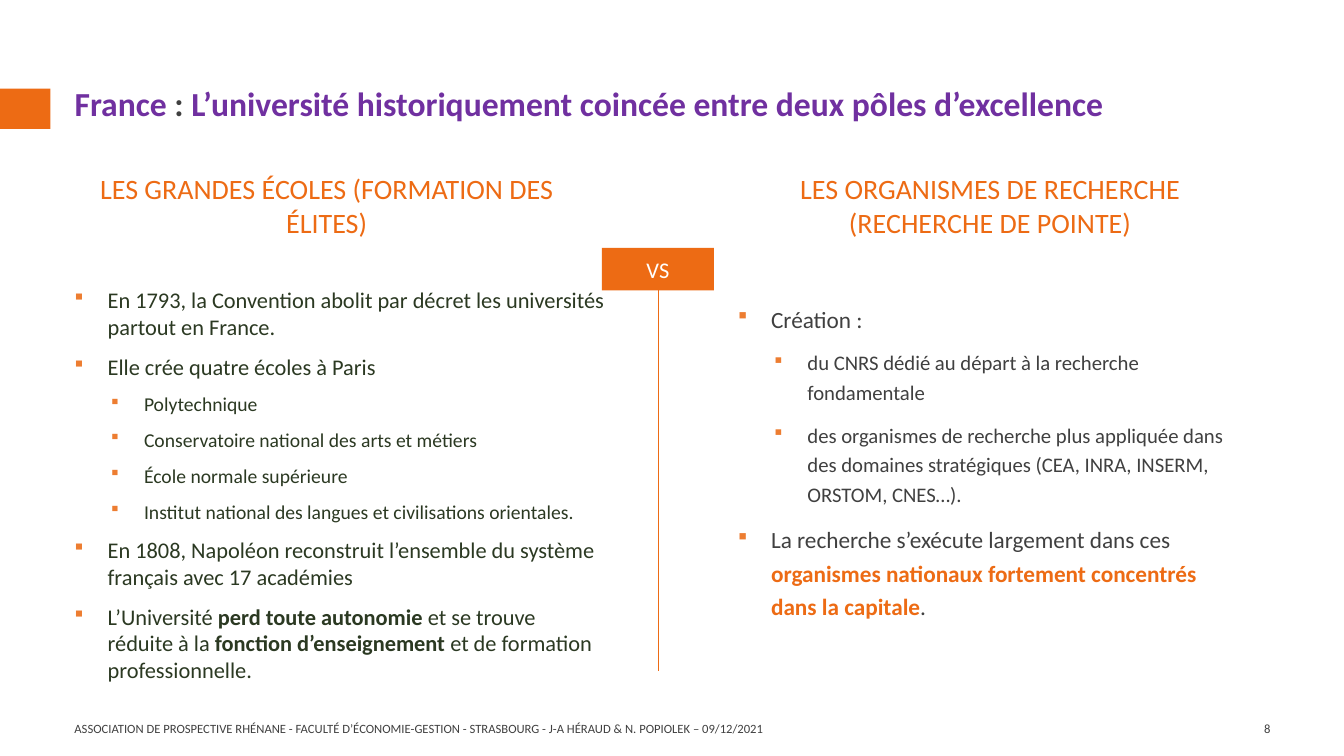
import pptx
import pptx.util
import pptx.dml.color
import pptx.enum.shapes
import pptx.enum.text
import pptx.oxml.ns
from lxml import etree

Inches, Pt = pptx.util.Inches, pptx.util.Pt
ALIGN = pptx.enum.text.PP_ALIGN
ANCHOR = pptx.enum.text.MSO_ANCHOR
qn = pptx.oxml.ns.qn

# Content: a run is (text, colour, bold); a bullet is (level, runs)
COLORS = {"orange": "ED6B14", "bullet": "ED7D31", "purple": "7030A0", "grey": "404040",
          "dark": "2B3922", "white": "FFFFFF"}
FONT = "Calibri"
TITLE = [("France ", "purple", True), (": ", "grey", True),
         ("L’université historiquement coincée entre deux pôles d’excellence", "purple", True)]
SCHOOLS = [
    (0, [("En 1793, la Convention abolit par décret les universités partout en France.", "dark", False)]),
    (0, [("Elle crée quatre écoles à Paris", "dark", False)]),
    (1, [("Polytechnique", "dark", False)]),
    (1, [("Conservatoire national des arts et métiers", "dark", False)]),
    (1, [("École normale supérieure", "dark", False)]),
    (1, [("Institut national des langues et civilisations orientales.", "dark", False)]),
    (0, [("En 1808, Napoléon reconstruit l’ensemble du système français avec 17 académies", "dark", False)]),
    (0, [("L’Université ", "dark", False), ("perd toute autonomie ", "dark", True),
         ("et se trouve réduite à la ", "dark", False), ("fonction d’enseignement ", "dark", True),
         ("et de formation professionnelle.", "dark", False)]),
]
RESEARCH = [
    (0, [("Création :", "grey", False)]),
    (1, [("du CNRS dédié au départ à la recherche fondamentale", "grey", False)]),
    (1, [("des organismes de recherche plus appliquée dans des domaines stratégiques "
          "(CEA, INRA, INSERM, ORSTOM, CNES…).", "grey", False)]),
    (0, [("La recherche s’exécute largement dans ces ", "grey", False),
         ("organismes nationaux fortement concentrés dans la capitale", "orange", True),
         (".", "grey", False)]),
]
# heading, left, bullets, (top, width, height), sizes by level, line spacing
COLUMNS = [
    ("LES GRANDES ÉCOLES (FORMATION DES ÉLITES)", 0.64, SCHOOLS, (2.79, 5.46, 2.37), (16, 14), 1.0),
    ("LES ORGANISMES DE RECHERCHE (RECHERCHE DE POINTE)", 7.22, RESEARCH, (2.92, 5.2, 3.52), (16.6, 14.8), 1.2),
]
FOOTER = ("ASSOCIATION DE PROSPECTIVE RHÉNANE - FACULTÉ D’ÉCONOMIE-GESTION - STRASBOURG - "
          "J-A HÉRAUD & N. POPIOLEK – 09/12/2021")
# text, left, width, alignment
FOOTERS = [(FOOTER, 0.64, 10.91, ALIGN.LEFT), ("8", 11.55, 1.15, ALIGN.RIGHT)]


def rgb(name):
    return pptx.dml.color.RGBColor.from_string(COLORS[name])


def add_runs(p, runs, size):
    for text, color, bold in runs:
        r = p.add_run()
        r.text = text
        r.font.name, r.font.size, r.font.bold = FONT, Pt(size), bold
        r.font.color.rgb = rgb(color)


def space(p, size):
    p.space_before, p.space_after = Pt(size * 0.2), Pt(6)


def add_text(s, box, anchor=ANCHOR.TOP):
    tf = s.shapes.add_textbox(*map(Inches, box)).text_frame
    tf.word_wrap, tf.vertical_anchor = True, anchor
    return tf


def add_bullet(p, level):
    pPr = p._p.get_or_add_pPr()
    pPr.set("marL", str(Inches((0.33, 0.69)[level])))
    pPr.set("indent", str(Inches(-0.33)))
    color = etree.SubElement(pPr, qn("a:buClr"))
    etree.SubElement(color, qn("a:srgbClr"), val=COLORS["bullet"])
    etree.SubElement(pPr, qn("a:buSzPct"), val="92000")
    etree.SubElement(pPr, qn("a:buFont"), typeface="Wingdings", charset="2")
    etree.SubElement(pPr, qn("a:buChar"), char="§")


def add_block(s, box):
    sp = s.shapes.add_shape(pptx.enum.shapes.MSO_SHAPE.RECTANGLE, *map(Inches, box))
    sp.shadow.inherit = False
    sp.fill.solid()
    sp.fill.fore_color.rgb = rgb("orange")
    sp.line.fill.background()
    return sp


prs = pptx.Presentation()
prs.slide_width, prs.slide_height = Inches(13.33), Inches(7.5)
s = prs.slides.add_slide(prs.slide_layouts[5])

# Title and its marker
add_block(s, (0, 0.88, 0.5, 0.4))
title = s.shapes.title
title.left, title.top, title.width, title.height = map(Inches, (0.64, 0.77, 12.06, 0.81))
tf = title.text_frame
tf.word_wrap, tf.vertical_anchor = True, ANCHOR.TOP
tf.auto_size = pptx.enum.text.MSO_AUTO_SIZE.NONE
tf.paragraphs[0].alignment = ALIGN.LEFT
add_runs(tf.paragraphs[0], TITLE, 24)

# Divider and VS label
divider = s.shapes.add_connector(pptx.enum.shapes.MSO_CONNECTOR.STRAIGHT,
                                 *map(Inches, (6.53, 2.56, 6.53, 6.66)))
divider.line.color.rgb = rgb("orange")
divider.line.width = Pt(1)
etree.SubElement(divider._element.spPr, qn("a:effectLst"))
tf = add_block(s, (5.97, 2.46, 1.11, 0.42)).text_frame
tf.margin_left = tf.margin_right = tf.margin_top = tf.margin_bottom = Inches(0.03)
tf.vertical_anchor = ANCHOR.MIDDLE
tf.paragraphs[0].alignment = ALIGN.CENTER
add_runs(tf.paragraphs[0], [("VS", "white", False)], 16)

# Two columns: heading and bullets
for heading, left, bullets, (top, width, height), sizes, spacing in COLUMNS:
    p = add_text(s, (left, 1.73, 5.2, 0.61), ANCHOR.MIDDLE).paragraphs[0]
    p.alignment = ALIGN.CENTER
    space(p, 20)
    add_runs(p, [(heading, "orange", False)], 20)
    tf = add_text(s, (left, top, width, height))
    for i, (level, runs) in enumerate(bullets):
        p = tf.add_paragraph() if i else tf.paragraphs[0]
        p.level, p.line_spacing = level, spacing
        space(p, sizes[level])
        add_bullet(p, level)
        add_runs(p, runs, sizes[level])

# Footer and page number
for text, left, width, align in FOOTERS:
    p = add_text(s, (left, 7.03, width, 0.4), ANCHOR.MIDDLE).paragraphs[0]
    p.alignment = align
    add_runs(p, [(text, "grey", False)], 9)

prs.save("out.pptx")
